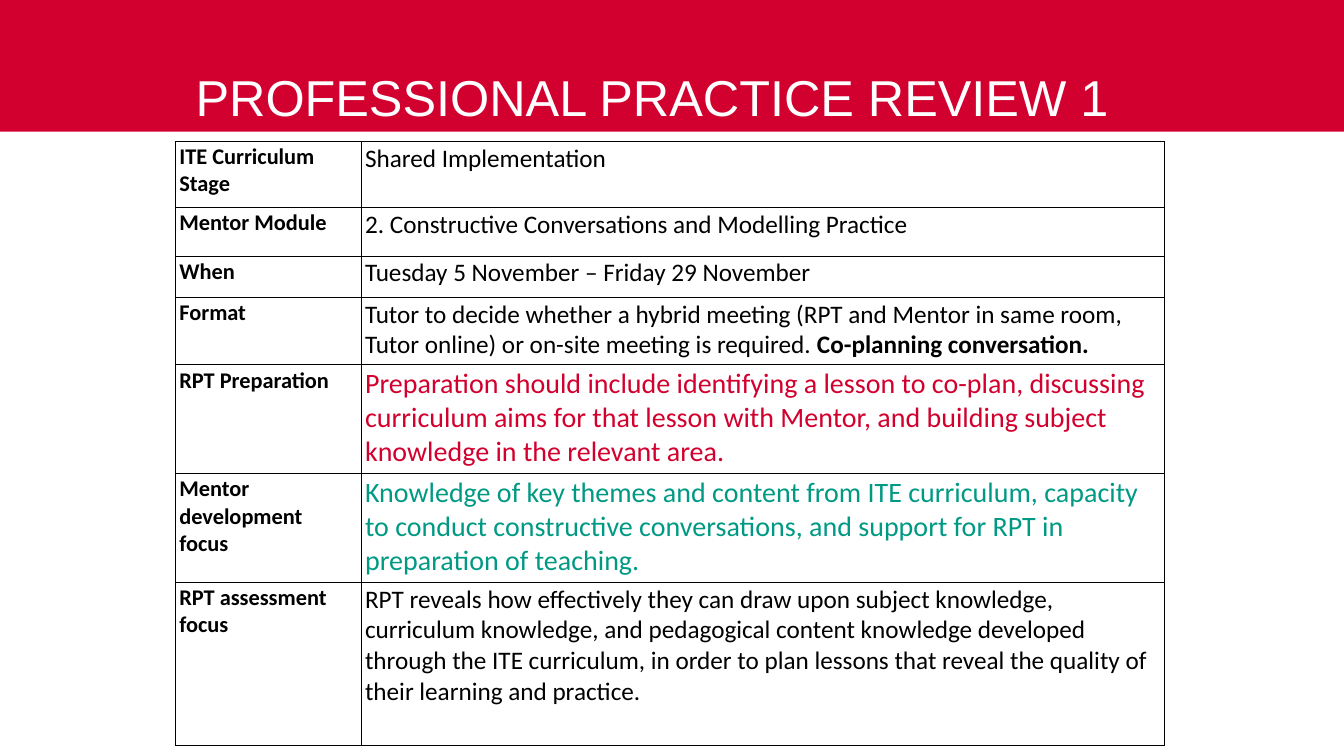
import pptx
import pptx.util
import pptx.dml.color
import pptx.enum.shapes
import pptx.enum.text
import pptx.oxml
import pptx.oxml.ns

Cm = pptx.util.Cm
Pt = pptx.util.Pt

theme = {
    "red": "D2002E", "green": "009A84", "black": "000000", "white": "FFFFFF",
    "head": 36, "label": 16, "body": 18, "large": 20,
}


def rgb(name):
    return pptx.dml.color.RGBColor.from_string(theme[name])


def write(para, text, face, size, tone, bold=False):
    run = para.add_run()
    run.text = text
    look = {"name": face, "size": Pt(theme[size]), "bold": bold}
    for key, value in look.items():
        setattr(run.font, key, value)
    run.font.color.rgb = rgb(tone)


deck = pptx.Presentation()
deck.slide_width, deck.slide_height = Cm(33.87), Cm(19.05)
slide = deck.slides.add_slide(deck.slide_layouts[6])

# Red backdrop and white panel
for top, tone in ((0, "red"), (3.32, "white")):
    panel = slide.shapes.add_shape(
        pptx.enum.shapes.MSO_SHAPE.RECTANGLE,
        0, Cm(top), deck.slide_width, deck.slide_height - Cm(top))
    panel.shadow.inherit = False
    panel.fill.solid()
    panel.fill.fore_color.rgb = rgb(tone)
    panel.line.fill.background()

# Title
title = slide.shapes.add_textbox(Cm(4.93), Cm(0.53), Cm(23.8), Cm(2.64))
frame = title.text_frame
setup = {
    "word_wrap": True, "vertical_anchor": pptx.enum.text.MSO_ANCHOR.BOTTOM,
    "margin_left": 0, "margin_right": 0, "margin_top": 0, "margin_bottom": 0,
}
for key, value in setup.items():
    setattr(frame, key, value)
frame.paragraphs[0].line_spacing = 0.8
write(frame.paragraphs[0], "PROFESSIONAL PRACTICE REVIEW 1", "Arial", "head", "white")

# Review details: height, label, size, colour, then (text, bold) parts
rows = [
    (1.67, "ITE Curriculum Stage", "body", "black",
     [("Shared Implementation", False)]),
    (1.22, "Mentor Module", "body", "black",
     [("2. Constructive Conversations and Modelling Practice", False)]),
    (1.04, "When", "body", "black",
     [("Tuesday 5 November – Friday 29 November", False)]),
    (1.7, "Format", "body", "black",
     [("Tutor to decide whether a hybrid meeting (RPT and Mentor in same room, "
       "Tutor online) or on-site meeting is required. ", False),
      ("Co-planning conversation.", True)]),
    (2.74, "RPT Preparation", "large", "red",
     [("Preparation should include identifying a lesson to co-plan, discussing "
       "curriculum aims for that lesson with Mentor, and building subject "
       "knowledge in the relevant area.", False)]),
    (2.74, "Mentor development focus", "large", "green",
     [("Knowledge of key themes and content from ITE curriculum, capacity to "
       "conduct constructive conversations, and support for RPT in "
       "preparation of teaching.", False)]),
    (4.12, "RPT assessment focus", "body", "black",
     [("RPT reveals how effectively they can draw upon subject knowledge, "
       "curriculum knowledge, and pedagogical content knowledge developed "
       "through the ITE curriculum, in order to plan lessons that reveal the "
       "quality of their learning and practice.", False)]),
]

# Table grid
high = sum(row[0] for row in rows)
grid = slide.shapes.add_table(
    len(rows), 2, Cm(4.42), Cm(3.56), Cm(24.92), Cm(high)).table
grid.first_row = False
grid.horz_banding = False
for col, width in zip(grid.columns, (4.68, 20.24)):
    col.width = Cm(width)

# Cell margins, borders and fill
inset = {
    "margin_left": Cm(0.1), "margin_right": Cm(0.1),
    "margin_top": Cm(0.05), "margin_bottom": Cm(0.05),
}
for cell in grid.iter_cells():
    for key, value in inset.items():
        setattr(cell, key, value)
    props = cell._tc.get_or_add_tcPr()
    for side in ("lnL", "lnR", "lnT", "lnB"):
        props.append(pptx.oxml.parse_xml(
            f'<a:{side} {pptx.oxml.ns.nsdecls("a")} w="{Pt(0.5)}"><a:solidFill>'
            f'<a:srgbClr val="{theme["black"]}"/></a:solidFill></a:{side}>'))
    cell.fill.background()

# Cell text, with labels kept clear of the column line
for i, (tall, label, size, tone, parts) in enumerate(rows):
    grid.rows[i].height = Cm(tall)
    grid.cell(i, 0).margin_right = Cm(0.3)
    write(grid.cell(i, 0).text_frame.paragraphs[0], label,
          "Calibri", "label", "black", True)
    for text, bold in parts:
        write(grid.cell(i, 1).text_frame.paragraphs[0], text,
              "Calibri", size, tone, bold)

deck.save("out.pptx")
